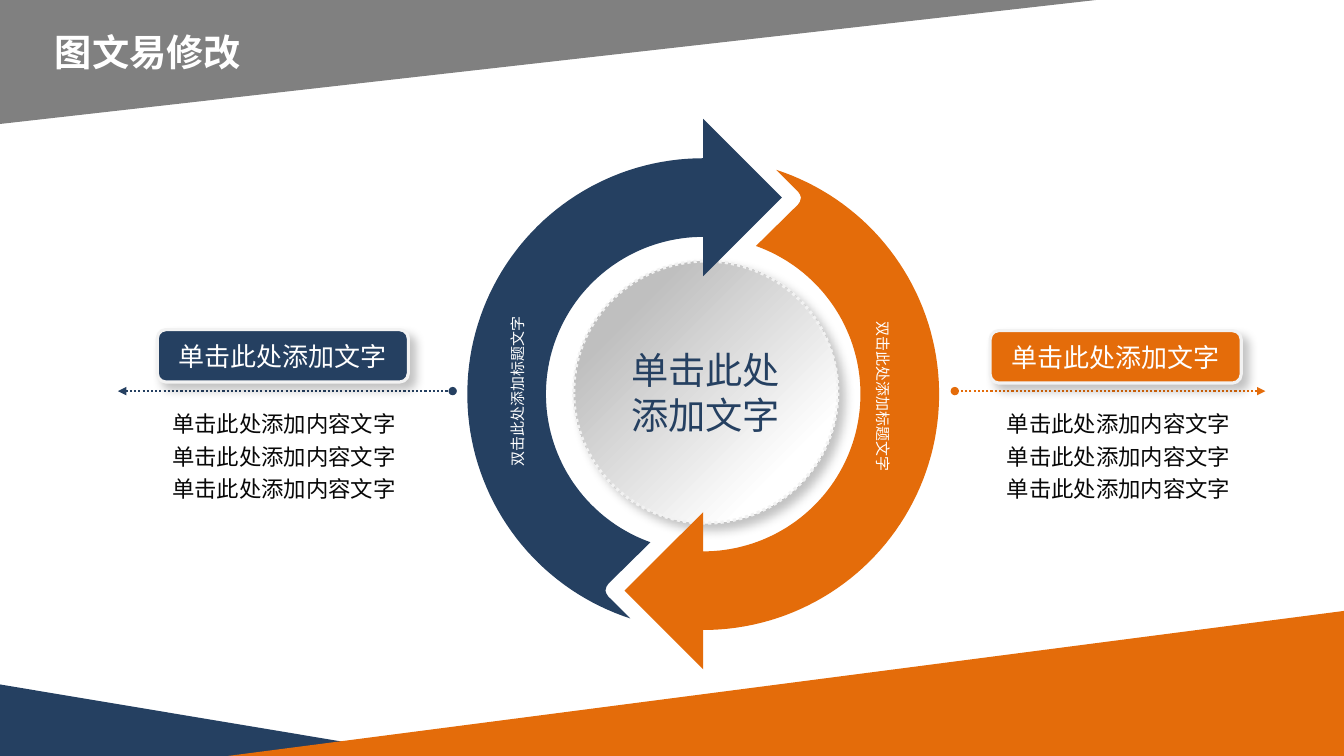
import math

import pptx
import pptx.dml.color
import pptx.enum.dml
import pptx.enum.shapes
import pptx.enum.text
import pptx.oxml
import pptx.oxml.ns
import pptx.util
from pptx.util import Inches, Pt

# Content
FONT = "Noto Sans CJK SC"
NAVY, ORANGE, GRAY = "254061", "E46C0A", "808080"
WHITE, RIM, INK = "FFFFFF", "F2F2F2", "080808"
TITLE = "图文易修改"
CENTER_LINES = ["单击此处", "添加文字"]
# left, top, width, height, rotation, flipped, colour
CORNERS = [
    (0, 6.79, 4.25, 0.71, 0, False, NAVY),
    (2.26, 6.06, 11.08, 1.44, 0, True, ORANGE),
    (0, 0, 10.87, 1.23, 180, True, GRAY),
]
# colour, direction from the ring's centre (1 or -1)
ARROWS = [(NAVY, 1), (ORANGE, -1)]
# text, box, rotation
RING_LABELS = [
    ("双击此处添加标题文字", (4.88, 2.44, 3.11, 2.89), 270),
    ("双击此处添加标题文字", (5.48, 2.27, 3.52, 3.33), 90),
]
# colour, heading, heading box, body, body box, line from x, line to x
PANELS = [
    (ORANGE, "单击此处添加文字", (9.82, 3.28, 2.49, 0.52),
     ["单击此处添加内容文字"] * 3, (9.87, 3.97, 2.45, 1.07), 12.55, 9.47),
    (NAVY, "单击此处添加文字", (1.56, 3.27, 2.49, 0.52),
     ["单击此处添加内容文字"] * 3, (1.59, 3.97, 2.45, 1.07), 1.17, 4.49),
]
LINE_Y = 3.88

# Ring geometry
RING_X, RING_Y = 6.975, 3.91
OUTER, INNER = 2.34, 1.56
ARROWHEAD = [(0, -1.17), (0.78, -1.95), (0, -2.73)]
NOTCH = [(-0.94, 2.01), (-0.96, 1.98), (-0.97, 1.95), (-0.96, 1.91), (-0.94, 1.88)]

deck = pptx.Presentation()
deck.slide_width, deck.slide_height = Inches(13.33), Inches(7.5)
slide = deck.slides.add_slide(deck.slide_layouts[6])
SHAPE = pptx.enum.shapes.MSO_SHAPE
ANCHOR = pptx.enum.text.MSO_ANCHOR


def color(target, hex_code):
    target.rgb = pptx.dml.color.RGBColor.from_string(hex_code)


def add_xml(parent, markup):
    namespace = pptx.oxml.ns.nsdecls("a")
    parent.append(pptx.oxml.parse_xml(markup.replace(" ", f" {namespace} ", 1)))


def paint(shape, fill=None, rim=None, shadow=False):
    if fill:
        shape.fill.solid()
        color(shape.fill.fore_color, fill)
    if rim:
        color(shape.line.color, rim)
        shape.line.width = Pt(2.25)
    else:
        shape.line.fill.background()
    if not shadow:
        shape.shadow.inherit = False


def cast_shadow(shape):
    add_xml(shape._element.spPr,
            '<a:effectLst ><a:outerShdw blurRad="88900" dist="74930" dir="2700000" '
            'algn="tl" rotWithShape="0"><a:srgbClr val="000000"><a:alpha val="23000"/>'
            '</a:srgbClr></a:outerShdw></a:effectLst>')


def add_preset(kind, box, fill=None, rim=None, shadow=False):
    shape = slide.shapes.add_shape(kind, *map(Inches, box))
    paint(shape, fill, rim, shadow)
    return shape


def write(shape, lines, size, ink, bold=False, spacing=None, wrap=False, anchor=ANCHOR.TOP):
    frame = shape.text_frame
    frame.word_wrap = wrap
    frame.vertical_anchor = anchor
    for i, line in enumerate(lines):
        paragraph = frame.paragraphs[0] if i == 0 else frame.add_paragraph()
        paragraph.alignment = pptx.enum.text.PP_ALIGN.CENTER
        if spacing:
            paragraph.line_spacing = spacing
        run = paragraph.add_run()
        run.text = line
        run.font.size, run.font.bold, run.font.name = Pt(size), bold, FONT
        color(run.font.color, ink)
        add_xml(run.font._element, f'<a:ea typeface="{FONT}"/>')


def add_text(box, lines, size, ink, **options):
    text = slide.shapes.add_textbox(*map(Inches, box))
    write(text, lines, size, ink, **options)
    return text


def arc(radius, start, end, steps=80):
    angles = [math.radians(start + (end - start) * i / steps) for i in range(steps + 1)]
    return [(radius * math.cos(a), radius * math.sin(a)) for a in angles]


# Corner wedges
for *box, rotation, flipped, fill in CORNERS:
    wedge = add_preset(SHAPE.RIGHT_TRIANGLE, box, fill)
    wedge.rotation = rotation
    if flipped:
        wedge._element.spPr.xfrm.set("flipH", "1")

# Centre disc
disc = add_preset(SHAPE.OVAL, (5.69, 2.59, 2.62, 2.6), rim=RIM, shadow=True)
disc.fill.gradient()
disc.fill.gradient_angle = 315
for stop, position, shade in zip(disc.fill.gradient_stops, (0.2, 0.8), ("BFBFBF", WHITE)):
    stop.position = position
    color(stop.color, shade)
disc.line.dash_style = pptx.enum.dml.MSO_LINE.ROUND_DOT
cast_shadow(disc)
write(disc, CENTER_LINES, 26.6, NAVY, anchor=ANCHOR.MIDDLE)

# Ring arrows: the second is the first turned half way round
outline = arc(OUTER, 270, 108) + NOTCH + arc(INNER, 109.6, 270) + ARROWHEAD
for fill, side in ARROWS:
    points = [(Inches(RING_X + side * x), Inches(RING_Y + side * y)) for x, y in outline]
    builder = slide.shapes.build_freeform(*points[0])
    builder.add_line_segments(points[1:], close=True)
    paint(builder.convert_to_shape(), fill)
for label, box, rotation in RING_LABELS:
    add_text(box, [label], 10.7, WHITE).rotation = rotation

# Side panels
for tint, heading, heading_box, body, body_box, tip_x, dot_x in PANELS:
    pointer = slide.shapes.add_connector(
        pptx.enum.shapes.MSO_CONNECTOR.STRAIGHT,
        Inches(tip_x), Inches(LINE_Y), Inches(dot_x), Inches(LINE_Y))
    color(pointer.line.color, tint)
    pointer.line.width = Pt(1.5)
    pointer.line.dash_style = pptx.enum.dml.MSO_LINE.ROUND_DOT
    stroke = pointer.line._get_or_add_ln()
    add_xml(stroke, '<a:headEnd type="triangle"/>')
    add_xml(stroke, '<a:tailEnd type="oval"/>')
    add_xml(pointer._element.spPr, "<a:effectLst />")

    plate = add_preset(SHAPE.ROUNDED_RECTANGLE, heading_box, tint, RIM, shadow=True)
    plate.adjustments[0] = 0.167
    cast_shadow(plate)
    write(plate, [heading], 18.6, WHITE, anchor=ANCHOR.MIDDLE)
    add_text(body_box, body, 16, INK, spacing=1.2)

# Title
title = add_text((0, 0.29, 2.94, 0.45), [TITLE], 26.6, WHITE, bold=True, wrap=True)
margins = title.text_frame
margins.margin_left = margins.margin_right = margins.margin_top = margins.margin_bottom = 0

deck.save("out.pptx")
